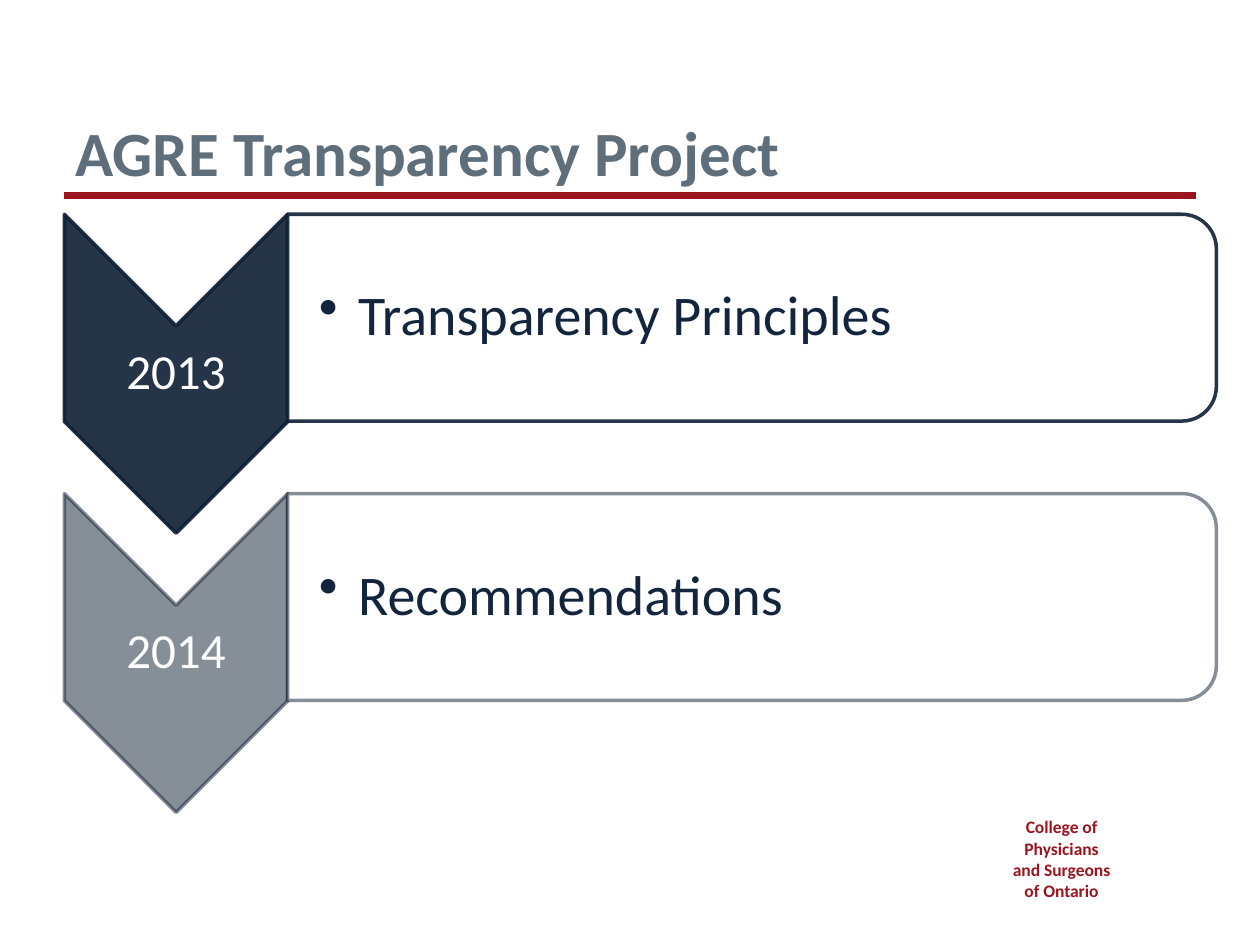
import pptx
import pptx.util
import pptx.dml.color
import pptx.enum.shapes
import pptx.enum.text
import pptx.oxml.ns
import lxml.etree

Cm, Pt = pptx.util.Cm, pptx.util.Pt
KIND = pptx.enum.shapes.MSO_SHAPE
SIDE = pptx.enum.text.PP_ALIGN
MID = pptx.enum.text.MSO_ANCHOR.MIDDLE
LOW = pptx.enum.text.MSO_ANCHOR.BOTTOM
TOP = pptx.enum.text.MSO_ANCHOR.TOP

# Content
TITLE = "AGRE Transparency Project"
ORG = "College of Physicians and Surgeons of Ontario"
STEPS = [  # year, point, opacity in percent
    ("2013", "Transparency Principles", 90),
    ("2014", "Recommendations", 50),
]

THEME = {
    "font": "Calibri",
    "red": "9B151F", "slate": "5E6E7B", "navy": "0E1E33",
    "ink": "13253D", "white": "FFFFFF",
    "title": 36, "point": 32, "year": 28, "org": 10,
    "rule": 4, "edge": 2,
}

# Layout in centimetres
LEFT, FIRST, PITCH = 1.3, 4.32, 5.63
ARROW_W, ARROW_H = 4.5, 6.43
BAR_W, BAR_H = 18.72, 4.17
PAD = (0.25, 0.13, 0.25, 0.13)
SLIM = (0.05, 0.05, 0.05, 0.05)


def tint(name):
    return pptx.dml.color.RGBColor.from_string(THEME[name])


def add(parent, tag, **attrs):
    node = lxml.etree.SubElement(parent, pptx.oxml.ns.qn(tag))
    for key, val in attrs.items():
        node.set(key, str(val))
    return node


def fade(fill, node, name, pct):
    """Give a fill a solid colour with pct opacity."""
    fill.solid()
    fill.fore_color.rgb = tint(name)
    clr = node.find(".//" + pptx.oxml.ns.qn("a:srgbClr"))
    add(clr, "a:alpha", val=pct * 1000)


def turned(slide, kind, mid_x, mid_y, wide, high, fill, alpha, edge):
    """Add a shape turned a quarter, seen as wide by high."""
    shape = slide.shapes.add_shape(
        kind, Cm(mid_x - high / 2), Cm(mid_y - wide / 2), Cm(high), Cm(wide))
    shape.rotation = 90
    shape.shadow.inherit = False
    props = shape.fill._xPr
    fade(shape.fill, props, fill, alpha)
    shape.line.width = Pt(THEME["edge"])
    fade(shape.line.fill, props.find(pptx.oxml.ns.qn("a:ln")), "navy", edge)


def label(slide, text, x, y, wide, high, size, color, bold=False,
          align=SIDE.LEFT, anchor=MID, pad=SLIM, lead=None, bullet=False):
    frame = slide.shapes.add_textbox(Cm(x), Cm(y), Cm(wide), Cm(high)).text_frame
    frame.word_wrap = True
    frame.vertical_anchor = anchor
    (frame.margin_left, frame.margin_top,
     frame.margin_right, frame.margin_bottom) = map(Cm, pad)
    para = frame.paragraphs[0]
    para.text = text
    para.alignment = align
    if lead:
        para.line_spacing = lead
    if bullet:
        props = para._p.get_or_add_pPr()
        props.set("marL", str(Cm(0.79)))
        props.set("indent", str(-Cm(0.79)))
        add(props, "a:buChar", char="•")
    font = para.font
    font.name, font.size, font.bold = THEME["font"], Pt(THEME[size]), bold
    font.color.rgb = tint(color)


def main():
    deck = pptx.Presentation()
    deck.slide_width, deck.slide_height = Cm(25.4), Cm(19.05)
    slide = deck.slides.add_slide(deck.slide_layouts[6])

    # Rule, organisation and title
    rule = slide.shapes.add_connector(
        pptx.enum.shapes.MSO_CONNECTOR.STRAIGHT,
        Cm(LEFT), Cm(3.94), Cm(24.1), Cm(3.94))
    rule.line.width = Pt(THEME["rule"])
    rule.line.color.rgb = tint("red")
    add(rule.line._get_or_add_ln().getparent(), "a:effectLst")
    label(slide, ORG, 20.1, 16.33, 2.6, 1.96, "org", "red", True,
          align=SIDE.CENTER, anchor=TOP, pad=PAD)
    label(slide, TITLE, 1.27, 0.76, 22.86, 3.18, "title", "slate", True,
          anchor=LOW, pad=PAD)

    # One arrow and one bar for each year
    bar_x = LEFT + ARROW_W
    for row, (year, point, alpha) in enumerate(STEPS):
        top = FIRST + row * PITCH
        arrow_y, bar_y = top + ARROW_H / 2, top + BAR_H / 2
        turned(slide, KIND.CHEVRON, LEFT + ARROW_W / 2, arrow_y,
               ARROW_W, ARROW_H, "navy", alpha, alpha)
        label(slide, year, LEFT, arrow_y - 0.97, ARROW_W, 1.94,
              "year", "white", align=SIDE.CENTER, lead=0.9)
        turned(slide, KIND.ROUND_2_SAME_RECTANGLE, bar_x + BAR_W / 2, bar_y,
               BAR_W, BAR_H, "white", 90, alpha)
        label(slide, point, bar_x, bar_y - 1.88, 18.52, 3.76, "point", "ink",
              pad=(0.63, 0.05, 0.05, 0.05), lead=0.9, bullet=True)

    deck.save("out.pptx")


if __name__ == "__main__":
    main()
